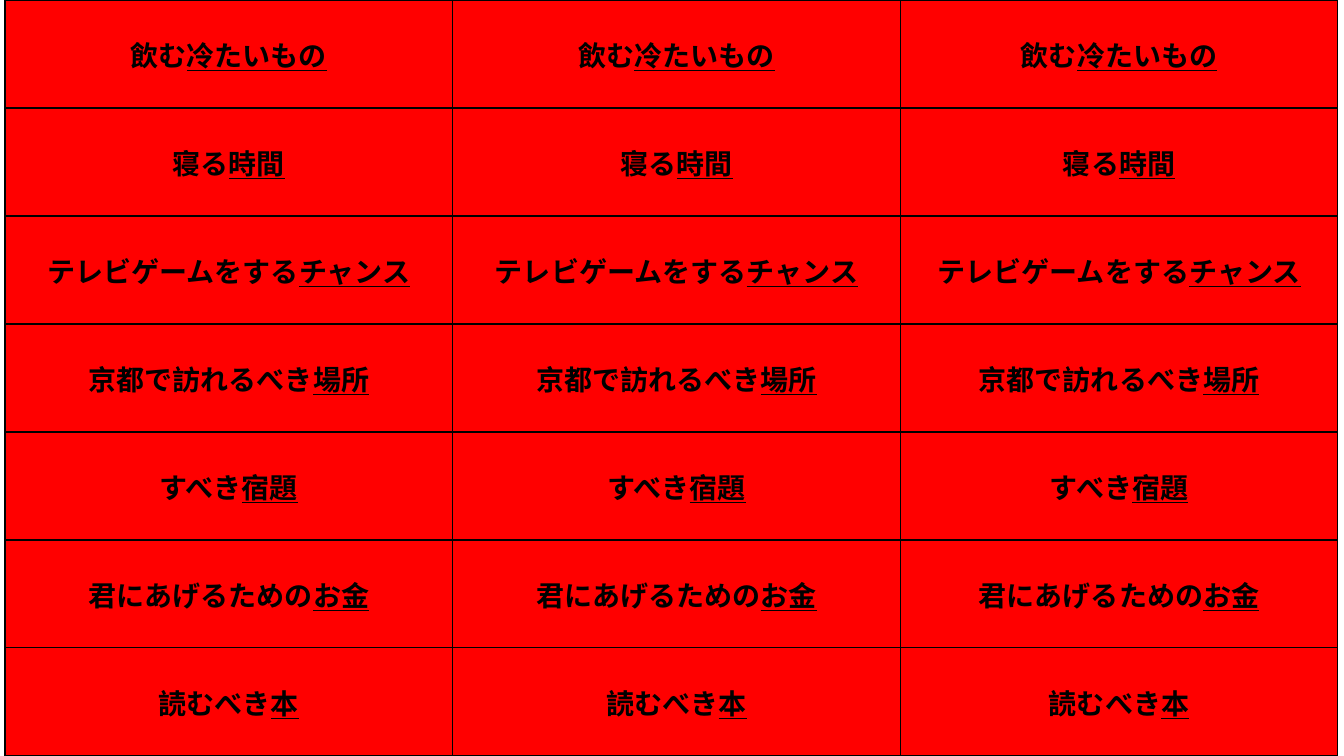
from typing import NamedTuple

from lxml.etree import SubElement
from pptx import Presentation
from pptx.dml.color import RGBColor
from pptx.enum.text import MSO_ANCHOR as Anchor, PP_ALIGN as Align
from pptx.oxml.ns import qn
from pptx.table import _Cell as Cell
from pptx.util import Inches, Pt

FONT = "Noto Sans CJK JP"
RED = "FF0000"
BLACK = "000000"
COLUMN_WIDTHS = (4.44, 4.44, 4.34)
TABLE_LEFT = 0.05
SLIDE_WIDTH = 13.33
SLIDE_HEIGHT = 7.5


class Phrase(NamedTuple):
    modifier: str
    noun: str


PHRASES = (
    Phrase("飲む", "冷たいもの"),
    Phrase("寝る", "時間"),
    Phrase("テレビゲームをする", "チャンス"),
    Phrase("京都で訪れるべき", "場所"),
    Phrase("すべき", "宿題"),
    Phrase("君にあげるための", "お金"),
    Phrase("読むべき", "本"),
)


def color(value: str) -> RGBColor:
    return RGBColor.from_string(value)


def add_borders(cell: Cell) -> None:
    properties = cell._tc.get_or_add_tcPr()
    for side in ("a:lnL", "a:lnR", "a:lnT", "a:lnB"):
        line = SubElement(properties, qn(side), w=str(Pt(1)))
        fill = SubElement(line, qn("a:solidFill"))
        SubElement(fill, qn("a:srgbClr"), val=BLACK)


def write_phrase(cell: Cell, phrase: Phrase) -> None:
    para = cell.text_frame.paragraphs[0]
    para.alignment = Align.CENTER
    for text, underlined in ((phrase.modifier, False), (phrase.noun, True)):
        span = para.add_run()
        span.text = text
        font = span.font
        font.size = Pt(20)
        font.bold = True
        font.underline = underlined
        font.color.rgb = color(BLACK)
        font.name = FONT
        SubElement(span._r.get_or_add_rPr(), qn("a:ea"), typeface=FONT)


def fill_cell(cell: Cell, phrase: Phrase) -> None:
    add_borders(cell)
    cell.fill.solid()
    cell.fill.fore_color.rgb = color(RED)
    cell.vertical_anchor = Anchor.MIDDLE
    write_phrase(cell, phrase)


def main() -> None:
    deck = Presentation()
    deck.slide_width = Inches(SLIDE_WIDTH)
    deck.slide_height = Inches(SLIDE_HEIGHT)
    page = deck.slides.add_slide(deck.slide_layouts[6])
    table = page.shapes.add_table(
        len(PHRASES), len(COLUMN_WIDTHS), Inches(TABLE_LEFT), Inches(0),
        Inches(sum(COLUMN_WIDTHS)), Inches(SLIDE_HEIGHT),
    ).table
    for column, width in zip(table.columns, COLUMN_WIDTHS):
        column.width = Inches(width)
    for row, phrase in zip(table.rows, PHRASES):
        row.height = Inches(SLIDE_HEIGHT / len(PHRASES))
        for cell in row.cells:
            fill_cell(cell, phrase)
    deck.save("out.pptx")


if __name__ == "__main__":
    main()
